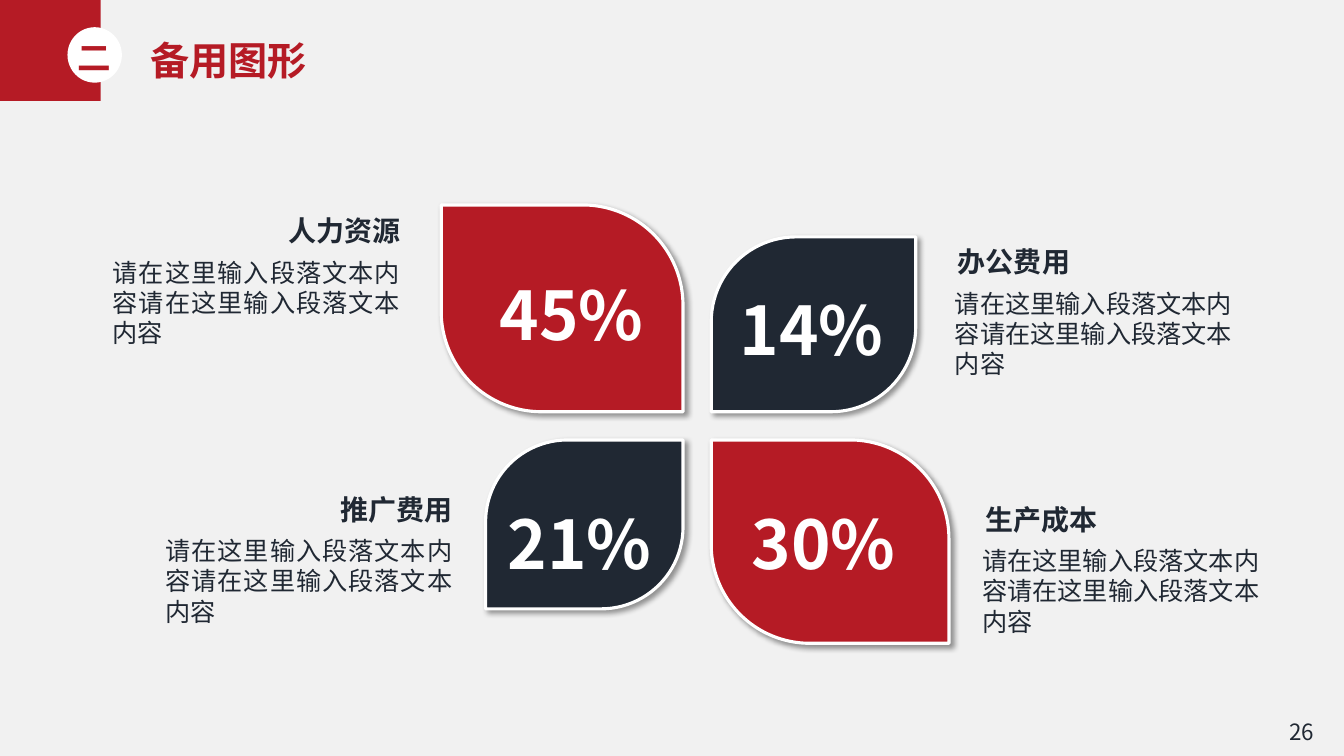
"""Build a slide with four leaves of cost shares around a hub."""
from math import cos, pi, sin

from pptx import Presentation
from pptx.dml.color import RGBColor as Rgb
from pptx.enum.shapes import MSO_SHAPE as Kind
from pptx.enum.text import MSO_ANCHOR as Anchor, PP_ALIGN as Align
from pptx.oxml.ns import qn
from pptx.util import Inches, Pt
from lxml.etree import SubElement as Sub

RED = Rgb(0xB5, 0x1B, 0x25)
NAVY = Rgb(0x20, 0x28, 0x33)
WHITE = Rgb(0xFF, 0xFF, 0xFF)
PALE = Rgb(0xF1, 0xF1, 0xF1)
FONT = "Noto Sans CJK SC"

TITLE, MARK, PAGE = "备用图形", "二", "26"
BODY = "请在这里输入段落文本内容请在这里输入段落文本内容"
# side, row, fill, width, share, share offset, heading, caption gap, caption drop
LEAVES = [
    (1, -1, NAVY, 2.03, "14%", (0.15, 0.39), "办公费用", 0.29, 0.01),
    (-1, -1, RED, 2.4, "45%", (0.45, 0.56), "人力资源", 0.31, 0.02),
    (1, 1, RED, 2.36, "30%", (0.27, 0.5), "生产成本", 0.23, 0.55),
    (-1, 1, NAVY, 1.96, "21%", (0.09, 0.5), "推广费用", 0.23, 0.45),
]
WIDE, HIGH = 13.34, 7.5
HUB_X, HUB_Y = 6.92, 4.225
GAP = 0.14
RATIO = 1.17
HEAD_W, HEAD_H, BODY_H = 2.18, 0.44, 1.01


def place(shape, x, y, w, h):
    shape.left, shape.top = Inches(x), Inches(y)
    shape.width, shape.height = Inches(w), Inches(h)


def write(shape, text, size, color, bold=False, align=Align.LEFT, pad=(0.1, 0.05)):
    frame = shape.text_frame
    frame.text = text
    frame.word_wrap = True
    frame.vertical_anchor = Anchor.TOP
    frame.margin_left = frame.margin_right = Inches(pad[0])
    frame.margin_top = Inches(pad[1] + 0.07 * size / 72)
    frame.margin_bottom = 0
    line = frame.paragraphs[0]
    line.alignment = align
    line.line_spacing = Pt(1.2 * size)
    run = line.runs[0]
    run.font.size, run.font.bold = Pt(size), bold
    run.font.name, run.font.color.rgb = FONT, color
    Sub(run.font._element, qn("a:ea"), typeface=FONT)


def label(slide, box, *args, **style):
    shape = slide.shapes.add_textbox(*map(Inches, box))
    write(shape, *args, **style)


def paint(shape, color):
    shape.shadow.inherit = False
    shape.fill.solid()
    shape.fill.fore_color.rgb = color
    shape.line.fill.background()


def header(slide):
    title = slide.shapes.title
    place(title, 1.39, 0.28, 3.05, 0.57)
    write(title, TITLE, 28, RED, bold=True)
    mid_x, mid_y, rad = 0.955, 0.545, 0.355
    turns = [pi * (i / 40 - 0.5) for i in range(41)]
    arc = [(mid_x + rad * cos(t), mid_y + rad * sin(t)) for t in turns]
    edge = [(-0.01, mid_y - rad), *arc, (-0.01, mid_y + rad)]
    pen = slide.shapes.build_freeform(*edge[0], scale=Inches(1))
    pen.add_line_segments(edge[1:])
    paint(pen.convert_to_shape(), RED)
    disc = slide.shapes.add_shape(Kind.OVAL, *map(Inches, (0.67, 0.27, 0.54, 0.55)))
    paint(disc, WHITE)
    label(slide, (0.67, 0.29, 0.54, 0.5), MARK, 24, RED, bold=True,
          align=Align.CENTER, pad=(0, 0.05))


def leaf(slide, x, y, w, h, color, flip):
    shape = slide.shapes.add_shape(Kind.ROUND_2_DIAG_RECTANGLE,
                                   *map(Inches, (x, y, w, h)))
    paint(shape, color)
    shape.adjustments[0], shape.adjustments[1] = 0.485, 0
    shape.line.color.rgb, shape.line.width = WHITE, Pt(2.25)
    props = shape._element.spPr
    if flip:
        props.find(qn("a:xfrm")).set("flipH", "1")
    glow = Sub(props.find(qn("a:effectLst")), qn("a:outerShdw"),
               blurRad=str(Pt(4)), dist=str(Pt(3)), dir=str(45 * 60000),
               algn="tl", rotWithShape="0")
    Sub(Sub(glow, qn("a:srgbClr"), val="000000"), qn("a:alpha"), val="40000")


def part(slide, side, row, color, w, share, shift, head, gap, drop):
    h = w / RATIO
    x = HUB_X + GAP if side > 0 else HUB_X - GAP - w
    y = HUB_Y + GAP if row > 0 else HUB_Y - GAP - h
    leaf(slide, x, y, w, h, color, flip=side == row)
    label(slide, (x + shift[0], y + shift[1], 1.84, 0.94), share, 48, WHITE,
          bold=True, pad=(0.13, 0.07))
    top = y + drop
    if side > 0:
        body_w, body_x = 3.12, x + w + gap
        head_x, heads, lines = body_x + 0.03, Align.LEFT, Align.LEFT
    else:
        body_w = 3.05
        body_x, head_x = x - gap - body_w, x - gap - HEAD_W
        heads, lines = Align.RIGHT, Align.JUSTIFY
    label(slide, (head_x, top, HEAD_W, HEAD_H), head, 20, NAVY, bold=True, align=heads)
    label(slide, (body_x, top + 0.43, body_w, BODY_H), BODY, 18, NAVY, align=lines)


def main():
    deck = Presentation()
    deck.slide_width, deck.slide_height = Inches(WIDE), Inches(HIGH)
    slide = deck.slides.add_slide(deck.slide_layouts[5])
    back = slide.background.fill
    back.solid()
    back.fore_color.rgb = PALE
    header(slide)
    for row in LEAVES:
        part(slide, *row)
    label(slide, (WIDE - 0.67, HIGH - 0.44, 0.5, 0.37), PAGE, 16, NAVY,
          align=Align.CENTER)
    deck.save("out.pptx")


if __name__ == "__main__":
    main()
